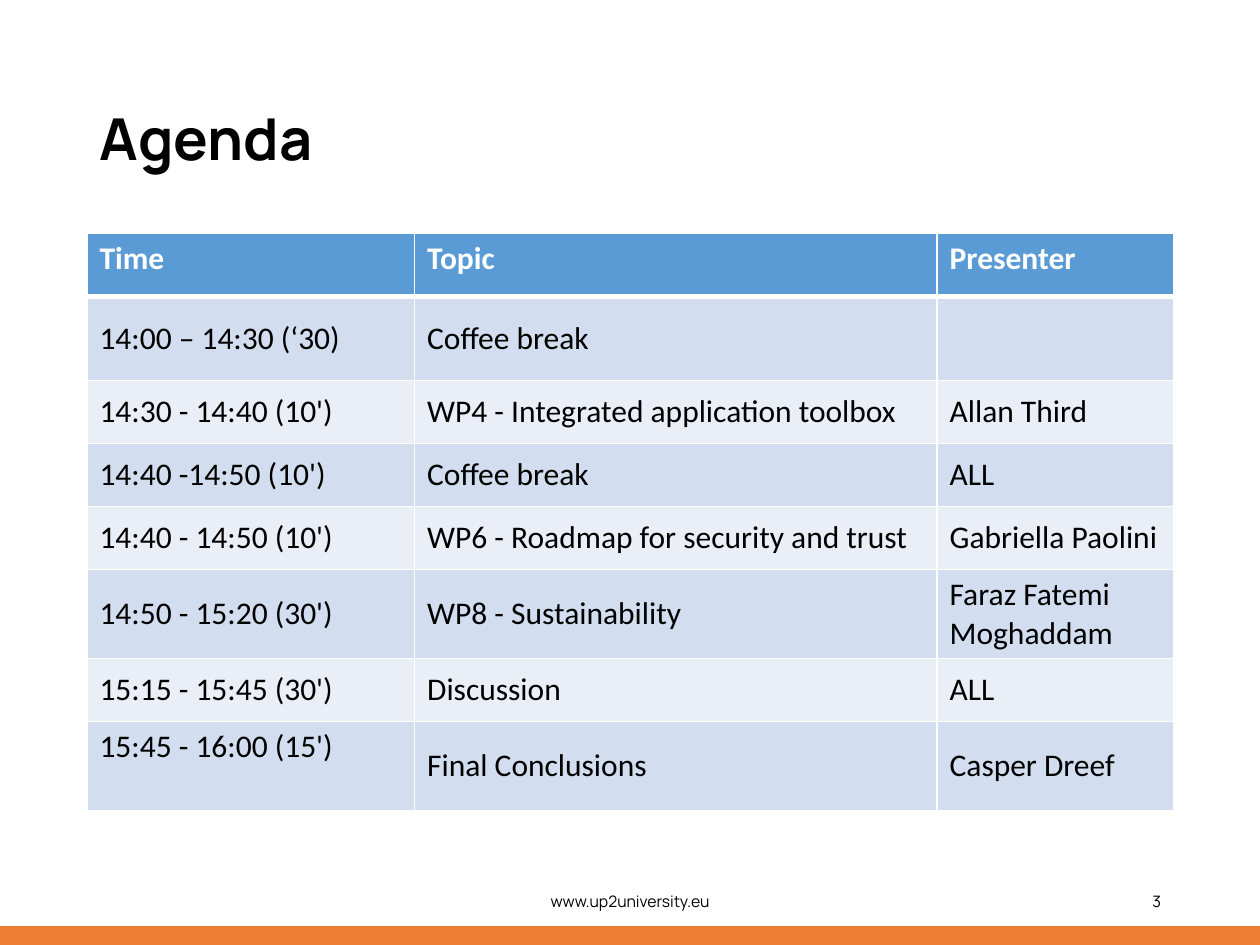
import pptx
import pptx.dml.color
import pptx.enum.shapes
import pptx.enum.text
import pptx.oxml
import pptx.oxml.ns
import pptx.util

Pt = pptx.util.Pt
ALIGN = pptx.enum.text.PP_ALIGN
ANCHOR = pptx.enum.text.MSO_ANCHOR

COLUMN_WIDTHS = [187.2, 298.6, 135]
ROW_HEIGHTS = [36, 48, 36, 36, 36, 50.8, 36, 50.8]
AGENDA = [
    ["Time", "Topic", "Presenter"],
    ["14:00 – 14:30 (‘30)", "Coffee break", ""],
    ["14:30 - 14:40 (10')", "WP4 - Integrated application toolbox", "Allan Third"],
    ["14:40 -14:50 (10')", "Coffee break", "ALL"],
    ["14:40 - 14:50 (10')", "WP6 - Roadmap for security and trust", "Gabriella Paolini"],
    ["14:50 - 15:20 (30')", "WP8 - Sustainability", "Faraz Fatemi Moghaddam"],
    ["15:15 - 15:45 (30')", "Discussion", "ALL"],
    ["15:45 - 16:00 (15')", "Final Conclusions", "Casper Dreef"],
]


def color(value):
    return pptx.dml.color.RGBColor.from_string(value)


def write_text(text_frame, text, font="Manrope", size=9, fill="000000",
               bold=False, align=ALIGN.LEFT, spacing=1.0):
    text_frame.word_wrap = True
    paragraph = text_frame.paragraphs[0]
    paragraph.alignment = align
    paragraph.line_spacing = spacing
    paragraph.font.size = Pt(size)
    if text:
        run = paragraph.add_run()
        run.text = text
        run.font.name = font
        run.font.size = Pt(size)
        run.font.bold = bold
        run.font.color.rgb = color(fill)


def add_title(slide, text):
    title = slide.shapes.title
    title.left, title.top, title.width, title.height = Pt(49.7), Pt(28.8), Pt(544.3), Pt(104.4)
    title.text_frame.auto_size = pptx.enum.text.MSO_AUTO_SIZE.NONE
    title.text_frame.vertical_anchor = ANCHOR.MIDDLE
    write_text(title.text_frame, text, size=33, bold=True, spacing=0.9)


def add_footer_text(slide, text, left, width, align):
    shape = slide.shapes.add_textbox(Pt(left), Pt(500.4), Pt(width), Pt(28.8))
    shape.text_frame.vertical_anchor = ANCHOR.MIDDLE
    write_text(shape.text_frame, text, align=align)


def add_footer_bar(slide):
    bar = slide.shapes.add_shape(
        pptx.enum.shapes.MSO_SHAPE.RECTANGLE, Pt(0), Pt(529.2), Pt(720), Pt(10.8))
    bar.shadow.inherit = False
    bar.fill.solid()
    bar.fill.fore_color.rgb = color("ED7D31")
    bar.line.fill.background()


def set_borders(cell, top=1, bottom=1):
    properties = cell._tc.get_or_add_tcPr()
    for side, width in (("L", 1), ("R", 1), ("T", top), ("B", bottom)):
        properties.append(pptx.oxml.parse_xml(
            f'<a:ln{side} {pptx.oxml.ns.nsdecls("a")} w="{Pt(width)}">'
            f'<a:solidFill><a:srgbClr val="FFFFFF"/></a:solidFill></a:ln{side}>'))


def format_cell(cell, text, row):
    header = row == 0
    set_borders(cell, top=3 if row == 1 else 1, bottom=3 if header else 1)
    cell.fill.solid()
    banding = "D2DEEF" if row % 2 else "EAEFF7"
    cell.fill.fore_color.rgb = color("5B9BD5" if header else banding)
    cell.vertical_anchor = ANCHOR.TOP if header else ANCHOR.MIDDLE
    write_text(cell.text_frame, text, font="Calibri", size=18, bold=header,
               fill="FFFFFF" if header else "000000")


def add_agenda_table(slide):
    table = slide.shapes.add_table(
        len(AGENDA), len(COLUMN_WIDTHS), Pt(49.7), Pt(133.5),
        Pt(sum(COLUMN_WIDTHS)), Pt(sum(ROW_HEIGHTS))).table
    for column, width in zip(table.columns, COLUMN_WIDTHS):
        column.width = Pt(width)
    for row, height in zip(table.rows, ROW_HEIGHTS):
        row.height = Pt(height)
    for row, texts in enumerate(AGENDA):
        for column, text in enumerate(texts):
            format_cell(table.cell(row, column), text, row)
    table.cell(len(AGENDA) - 1, 0).vertical_anchor = ANCHOR.TOP


def main():
    presentation = pptx.Presentation()
    presentation.slide_width, presentation.slide_height = Pt(720), Pt(540)
    slide = presentation.slides.add_slide(presentation.slide_layouts[5])
    add_footer_bar(slide)
    add_title(slide, "Agenda")
    add_footer_text(slide, "www.up2university.eu", 238.5, 243, ALIGN.CENTER)
    add_footer_text(slide, "3", 508.5, 162, ALIGN.RIGHT)
    add_agenda_table(slide)
    presentation.save("out.pptx")


if __name__ == "__main__":
    main()
